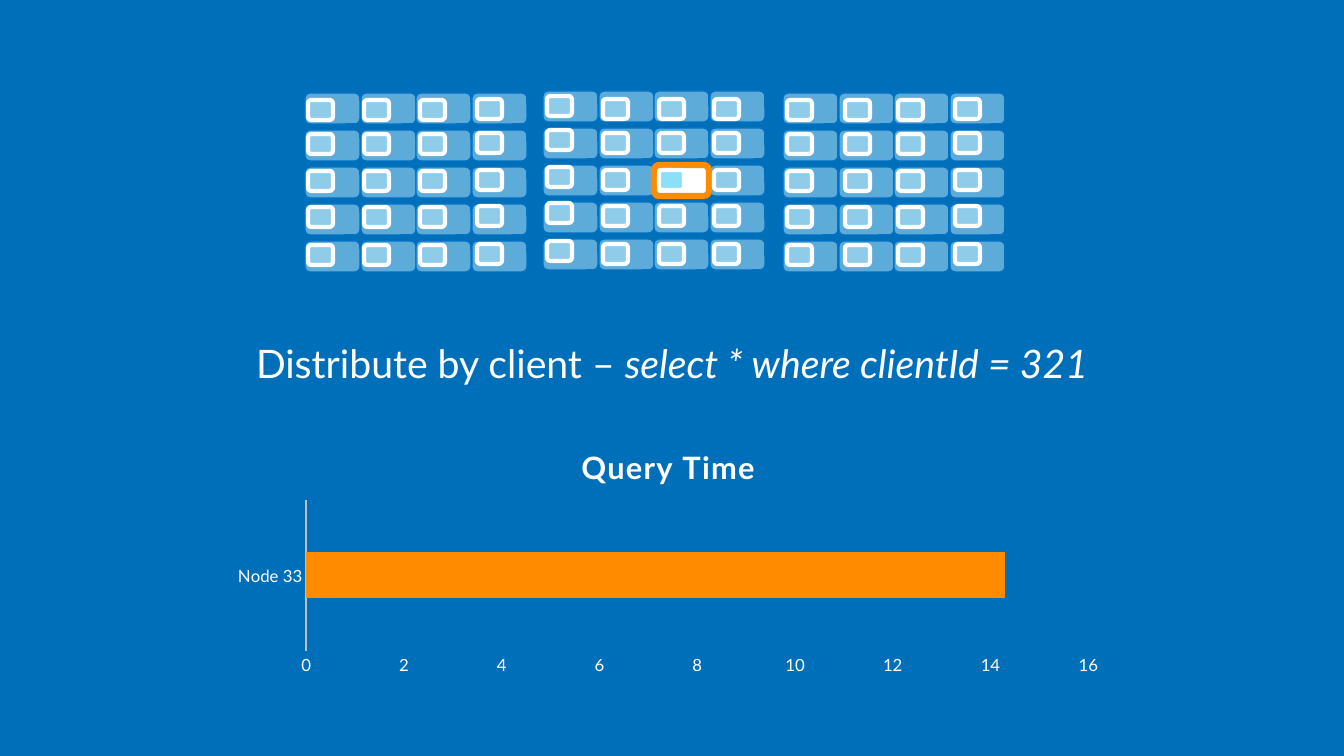
from pptx import Presentation
from pptx.chart.data import CategoryChartData
from pptx.dml.color import RGBColor
from pptx.enum.chart import XL_CHART_TYPE, XL_TICK_MARK
from pptx.enum.shapes import MSO_SHAPE
from pptx.enum.text import MSO_ANCHOR, PP_ALIGN
from pptx.oxml.ns import qn
from pptx.util import Emu, Pt
from lxml import etree

ROUNDED = MSO_SHAPE.ROUNDED_RECTANGLE
BAR = XL_CHART_TYPE.BAR_CLUSTERED
NO_TICK = XL_TICK_MARK.NONE
CENTER, MIDDLE = PP_ALIGN.CENTER, MSO_ANCHOR.MIDDLE

EMU_PER_PX = 914400 / 100.8
FONT = "Lato"
COLORS = {
    "blue": "006FBA", "edge": "0072C6", "ice": "C9F3FF", "cyan": "00BCF2",
    "white": "FFFFFF", "orange": "FF8C00", "axis": "BFBFBF",
}
TITLE_ONLY = 5

# Each block of nodes: top, left of each column, then (left, top) of each column of shards
NODE_BLOCKS = [
    (93, (305, 361, 416, 472), ((308, 100), (364, 100), (420, 100), (477, 99))),
    (91, (543, 599, 654, 710), ((547, 96), (603, 99), (659, 99), (714, 99))),
    (93, (783, 839, 894, 950), ((787, 100), (845, 100), (898, 100), (955, 99))),
]
NODE_SIZE, NODE_PITCH, ROWS = (55, 31), 37, 5
SHARD_SIZE, SHARD_ROWS = (25, 20), (0, 34, 71, 107, 145)
HIT = (1, 2, 2)  # block, column and row of the node that answers the query


def px(length):
    return Emu(round(length * EMU_PER_PX))


def rgb(name):
    return RGBColor.from_string(COLORS[name])


class Page:
    def __init__(self, deck):
        self.slide = deck.slides.add_slide(deck.slide_layouts[TITLE_ONLY])
        fill = self.slide.background.fill
        fill.solid()
        fill.fore_color.rgb = rgb("blue")

    def style_font(self, font, size, **values):
        for name, value in {"name": FONT, "size": Pt(size), "bold": False, **values}.items():
            setattr(font, name, value)
        font.color.rgb = rgb("white")

    def rounded(self, left, top, size, fill, line, weight, alpha=None):
        box = self.slide.shapes.add_shape(ROUNDED, px(left), px(top), *map(px, size))
        box.shadow.inherit = False
        box.fill.solid()
        box.fill.fore_color.rgb = rgb(fill)
        box.line.color.rgb = rgb(line)
        box.line.width = Pt(weight)
        if alpha:
            color = box.fill._xPr.find(qn("a:solidFill"))[0]
            etree.SubElement(color, qn("a:alpha"), val=str(alpha * 1000))

    def title(self, left, top, width, height, spans, size):
        """Place the title; spans are (text, italic) pairs."""
        box = self.slide.shapes.title
        box.left, box.top, box.width, box.height = map(px, (left, top, width, height))
        frame = box.text_frame
        frame.word_wrap = True
        frame.vertical_anchor = MIDDLE
        para = frame.paragraphs[0]
        para.alignment = CENTER
        for text, italic in spans:
            span = para.add_run()
            span.text = text
            self.style_font(span.font, size, italic=italic)

    def bar_chart(self, left, top, width, height, name, values, maximum, step):
        data = CategoryChartData()
        data.categories = list(values)
        data.add_series(name, list(values.values()))
        chart = self.slide.shapes.add_chart(
            BAR, *map(px, (left, top, width, height)), data).chart
        self.style_font(chart.font, 10)
        chart.has_legend = False

        chart.has_title = True
        para = chart.chart_title.text_frame.paragraphs[0]
        span = para.add_run()
        span.text = name
        self.style_font(span.font, 22, bold=True)
        span.font._element.set("spc", "100")

        plot = chart.plots[0]
        plot.gap_width, plot.overlap, plot.vary_by_categories = 227, -48, False
        fill = plot.series[0].format.fill
        fill.solid()
        fill.fore_color.rgb = rgb("orange")

        for axis in (chart.category_axis, chart.value_axis):
            axis.major_tick_mark = axis.minor_tick_mark = NO_TICK
            axis.has_major_gridlines = False
            self.style_font(axis.tick_labels.font, 12)
        chart.category_axis.format.line.color.rgb = rgb("axis")
        chart.category_axis.format.line.width = Pt(1.5)
        scale = {"minimum_scale": 0, "maximum_scale": maximum, "major_unit": step}
        for setting, value in scale.items():
            setattr(chart.value_axis, setting, value)
        chart.value_axis.format.line.fill.background()


def draw_nodes(page):
    for block, (top, lefts, _) in enumerate(NODE_BLOCKS):
        for column, left in enumerate(lefts):
            for row in range(ROWS):
                if (block, column, row) != HIT:
                    page.rounded(left, top + row * NODE_PITCH, NODE_SIZE, "ice", "edge", 1, 46)
    block, column, row = HIT
    top, lefts, _ = NODE_BLOCKS[block]
    page.rounded(lefts[column], top + row * NODE_PITCH, NODE_SIZE, "white", "orange", 4.5)


def draw_shards(page):
    for block, (_, _, shards) in enumerate(NODE_BLOCKS):
        for column, (left, top) in enumerate(shards):
            for row, offset in enumerate(SHARD_ROWS):
                fill = "cyan" if (block, column, row) == HIT else "ice"
                page.rounded(left, top + offset, SHARD_SIZE, fill, "white", 3, 46)


def main():
    deck = Presentation()
    deck.slide_width, deck.slide_height = px(1344), px(756)
    page = Page(deck)
    draw_nodes(page)
    draw_shards(page)
    page.title(72, 334, 1200, 57, [("Distribute by client – ", False),
                                   ("select * where clientId = 321", True)], 28)
    page.bar_chart(220, 429, 896, 251, "Query Time", {"Node 33": 14.3}, 16, 2)
    deck.save("out.pptx")


if __name__ == "__main__":
    main()
